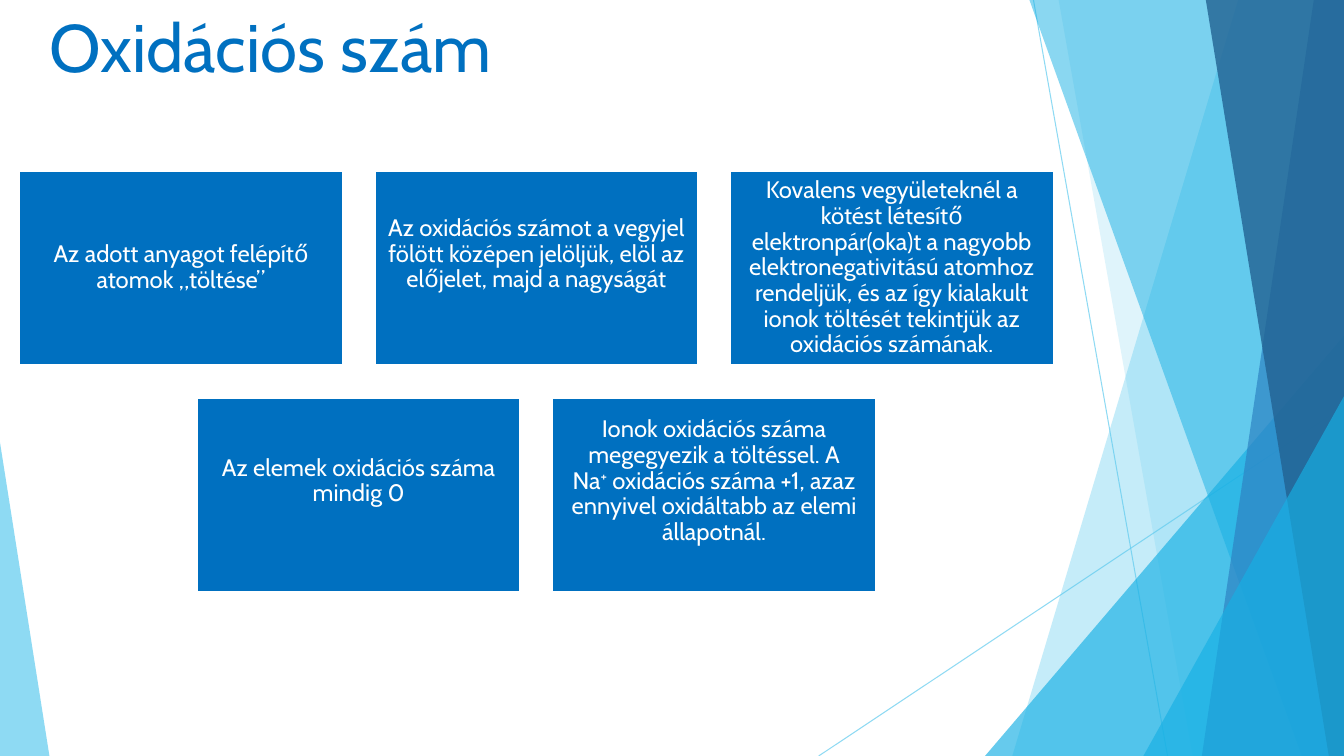
from lxml.etree import SubElement
from pptx import Presentation
from pptx.dml.color import RGBColor
from pptx.enum.shapes import MSO_CONNECTOR as Connector, MSO_SHAPE as Shape
from pptx.enum.text import MSO_ANCHOR as Anchor, PP_ALIGN as Align
from pptx.oxml.ns import qn
from pptx.util import Inches, Pt

WIDTH, HEIGHT = 13.33, 7.5
FONT = "Cabin"
COLORS = {"main": "0070C0", "white": "FFFFFF", "sky": "5FCBEF",
          "cyan": "17B0E4", "blue": "2E83C3", "navy": "226292"}

TITLE = "Oxidációs szám"
CARD_ROWS = [
    [
        {"spans": ["Az adott anyagot felépítő atomok „töltése”"], "lift": 0},
        {"spans": ["Az oxidációs számot a vegyjel fölött középen jelöljük, "
                   "elöl az előjelet, majd a nagyságát"], "lift": 0.27},
        {"spans": ["Kovalens vegyületeknél a kötést létesítő elektronpár(oka)t "
                   "a nagyobb elektronegativitású atomhoz rendeljük, és az így "
                   "kialakult ionok töltését tekintjük az oxidációs számának."],
         "lift": 0},
    ],
    [
        {"spans": ["Az elemek oxidációs száma mindig 0"], "lift": 0.27},
        {"spans": ["Ionok oxidációs száma megegyezik a töltéssel. A Na", "+",
                   "\u00a0oxidációs száma +1, azaz ennyivel oxidáltabb az elemi "
                   "állapotnál."], "lift": 0.27},
    ],
]
CARD_WIDTH, CARD_HEIGHT = 3.21, 1.92
COLUMN_STEP, ROW_STEP = 3.525, 2.25
GRID_LEFT, GRID_TOP = 0.19, 1.7
INSET = 0.07

RAYS = [((10.25, 0), (11.58, HEIGHT)), ((WIDTH, 4.03), (8.12, HEIGHT))]
FACETS = [
    {"kind": "band", "top": 12.28, "bottom": 10.04, "color": "sky", "alpha": 36},
    {"kind": "band", "top": 10.5, "bottom": 11.83, "color": "sky", "alpha": 20},
    {"kind": "triangle", "box": (9.77, 3.33, 3.56, 4.17), "apex": 1, "color": "cyan", "alpha": 66},
    {"kind": "band", "top": 10.21, "bottom": 12.91, "color": "cyan", "alpha": 50},
    {"kind": "band", "top": 13.03, "bottom": 11.92, "color": "blue", "alpha": 70},
    {"kind": "band", "top": 11.96, "bottom": 13.18, "color": "navy", "alpha": 80},
    {"kind": "triangle", "box": (11.34, 3.93, 1.99, 3.57), "apex": 1, "color": "cyan", "alpha": 66},
    {"kind": "triangle", "box": (0, 4.39, 0.49, 3.11), "apex": 0, "color": "sky", "alpha": 70},
]


def rgb(name):
    return RGBColor.from_string(COLORS[name])


def set_alpha(element, percent):
    for color in element.iter(qn("a:srgbClr")):
        SubElement(color, qn("a:alpha")).set("val", str(percent * 1000))


def write(para, text, size, color, raised=False):
    span = para.add_run()
    span.text = text
    span.font.name = FONT
    span.font.size = Pt(size)
    span.font.color.rgb = rgb(color)
    if raised:
        span.font._element.set("baseline", "30000")


def add_ray(page, start, end):
    ray = page.shapes.add_connector(
        Connector.STRAIGHT, *[Inches(value) for value in start + end])
    ray.line.color.rgb = rgb("sky")
    ray.line.width = Pt(0.75)
    properties = ray._element.spPr
    set_alpha(properties, 70)
    SubElement(properties, qn("a:effectLst"))


def add_facet(page, facet):
    if facet["kind"] == "band":
        corners = [(facet["top"], 0), (WIDTH, 0), (WIDTH, HEIGHT),
                   (facet["bottom"], HEIGHT)]
        points = [(Inches(x), Inches(y)) for x, y in corners]
        builder = page.shapes.build_freeform(*points[0])
        builder.add_line_segments(points[1:], close=True)
        shape = builder.convert_to_shape()
    else:
        shape = page.shapes.add_shape(
            Shape.ISOSCELES_TRIANGLE, *[Inches(value) for value in facet["box"]])
        shape.adjustments[0] = facet["apex"]
    shape.shadow.inherit = False
    shape.fill.solid()
    shape.fill.fore_color.rgb = rgb(facet["color"])
    set_alpha(shape._element.spPr, facet["alpha"])
    shape.line.fill.background()


def add_card(page, card, left, top):
    box = page.shapes.add_shape(
        Shape.RECTANGLE, Inches(left), Inches(top),
        Inches(CARD_WIDTH), Inches(CARD_HEIGHT))
    box.shadow.inherit = False
    box.fill.solid()
    box.fill.fore_color.rgb = rgb("main")
    box.line.color.rgb = rgb("white")
    box.line.width = Pt(1.5)
    frame = box.text_frame
    frame.word_wrap = True
    frame.vertical_anchor = Anchor.MIDDLE
    frame.margin_left = frame.margin_right = frame.margin_top = Inches(INSET)
    frame.margin_bottom = Inches(INSET + card["lift"])
    para = frame.paragraphs[0]
    para.alignment = Align.CENTER
    para.line_spacing = 0.9
    for text in card["spans"]:
        write(para, text, size=17, color="white", raised=text == "+")


def add_title(page):
    title = page.shapes.title
    title.left, title.top = Inches(0.39), Inches(0)
    title.width, title.height = Inches(9.4), Inches(1.44)
    frame = title.text_frame
    frame.word_wrap = True
    frame.vertical_anchor = Anchor.TOP
    para = frame.paragraphs[0]
    para.alignment = Align.LEFT
    write(para, TITLE, size=48, color="main")


def main():
    deck = Presentation()
    deck.slide_width, deck.slide_height = Inches(WIDTH), Inches(HEIGHT)
    page = deck.slides.add_slide(deck.slide_layouts[5])
    for start, end in RAYS:
        add_ray(page, start, end)
    for facet in FACETS:
        add_facet(page, facet)
    add_title(page)
    most = max(len(row) for row in CARD_ROWS)
    for row_index, row in enumerate(CARD_ROWS):
        row_left = GRID_LEFT + (most - len(row)) * COLUMN_STEP / 2
        for column, card in enumerate(row):
            add_card(page, card, row_left + column * COLUMN_STEP,
                     GRID_TOP + row_index * ROW_STEP)
    deck.save("out.pptx")


if __name__ == "__main__":
    main()
